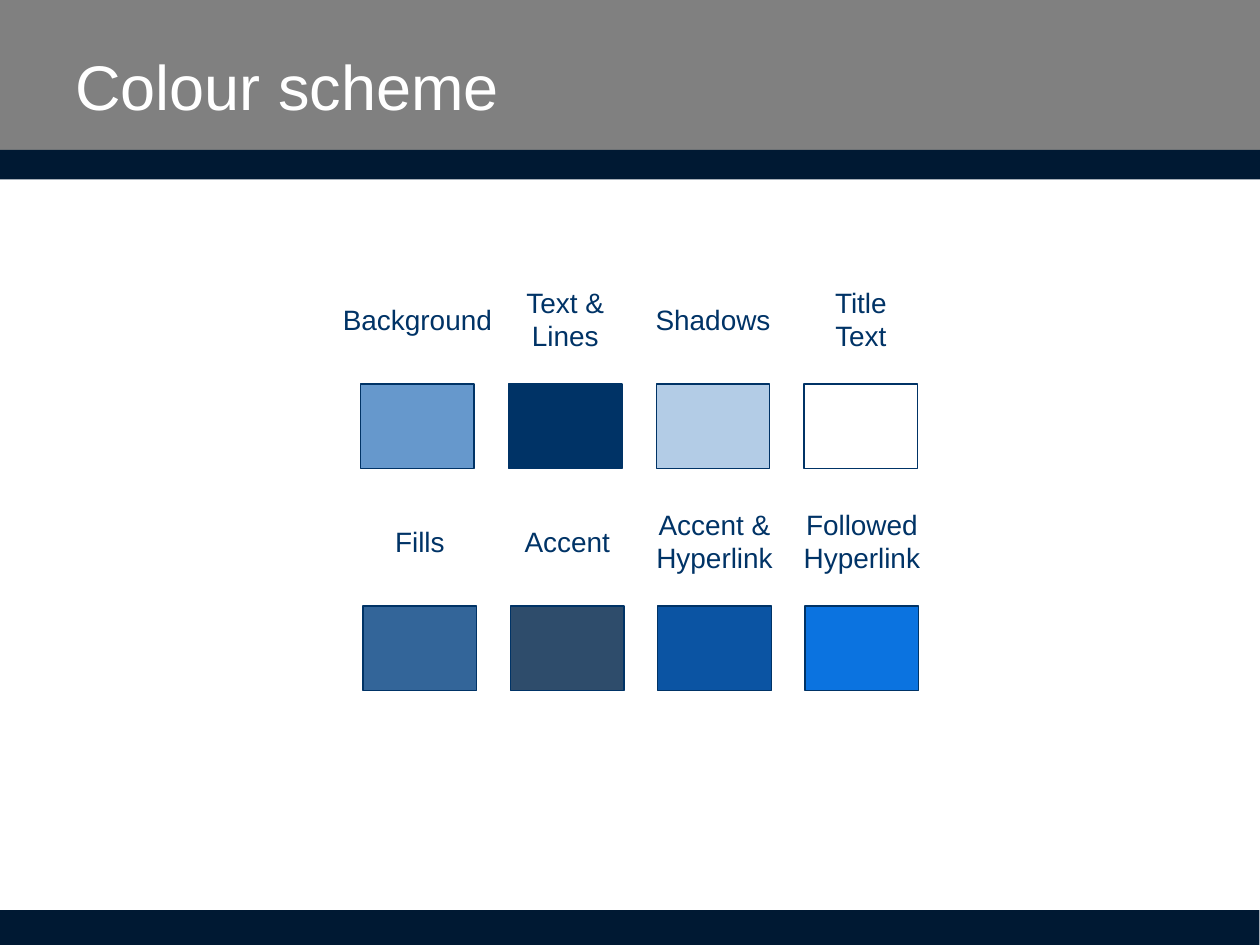
from pptx import Presentation
from pptx.dml.color import RGBColor
from pptx.enum.shapes import MSO_SHAPE
from pptx.enum.text import MSO_ANCHOR, MSO_AUTO_SIZE, PP_ALIGN
from pptx.util import Cm, Pt

COLOURS = {
    "header": "808080",
    "band": "001933",
    "title": "FFFFFF",
    "ink": "003366",
    "background": "6698CC",
    "shadows": "B3CCE6",
    "fills": "336599",
    "accent": "2E4C6B",
    "hyperlink": "0B54A3",
    "followed": "0B73E0",
}


def add_block(left, top, width, height, fill, outline=None):
    block = slide.shapes.add_shape(
        MSO_SHAPE.RECTANGLE, Cm(left), Cm(top), Cm(width), Cm(height))
    block.shadow.inherit = False
    block.fill.solid()
    block.fill.fore_color.rgb = RGBColor.from_string(COLOURS[fill])
    if outline:
        block.line.color.rgb = RGBColor.from_string(COLOURS[outline])
        block.line.width = Pt(0.75)
    else:
        block.line.fill.background()


def add_text(left, top, width, height, lines, size, colour, align, fit):
    box = slide.shapes.add_textbox(Cm(left), Cm(top), Cm(width), Cm(height))
    frame = box.text_frame
    frame.word_wrap = not fit
    frame.auto_size = MSO_AUTO_SIZE.SHAPE_TO_FIT_TEXT if fit else MSO_AUTO_SIZE.NONE
    frame.vertical_anchor = MSO_ANCHOR.TOP if fit else MSO_ANCHOR.MIDDLE
    for index, line in enumerate(lines):
        paragraph = frame.add_paragraph() if index else frame.paragraphs[0]
        paragraph.alignment = align
        run = paragraph.add_run()
        run.text = line
        run.font.name = "Arial"
        run.font.size = Pt(size)
        run.font.color.rgb = RGBColor.from_string(COLOURS[colour])


presentation = Presentation()
presentation.slide_width = Cm(25.4)
presentation.slide_height = Cm(19.05)
slide = presentation.slides.add_slide(presentation.slide_layouts[6])

add_block(0, 0, 25.4, 3.33, "header")
add_block(0, 3.02, 25.4, 0.6, "band")
add_block(0, 18.35, 25.39, 0.75, "band")
add_text(1.27, 0.71, 23.04, 2.01, ["Colour scheme"], 36,
         "title", PP_ALIGN.LEFT, False)

swatch_width, swatch_height = 2.29, 1.7
label_rise = 1.3
label_heights = {1: 0.94, 2: 1.63}

swatch_rows = [
    (7.27, 7.74, 2.98, [
        (["Background"], 3.53, "background"),
        (["Text &", "Lines"], 2.13, "ink"),
        (["Shadows"], 2.82, "shadows"),
        (["Title", "Text"], 1.6, "title"),
    ]),
    (7.32, 12.22, 2.97, [
        (["Fills"], 1.5, "fills"),
        (["Accent"], 2.24, "accent"),
        (["Accent &", "Hyperlink"], 2.88, "hyperlink"),
        (["Followed", "Hyperlink"], 2.88, "followed"),
    ]),
]

for row_left, row_top, pitch, swatches in swatch_rows:
    for column, (label, label_width, fill) in enumerate(swatches):
        left = row_left + column * pitch
        add_block(left, row_top, swatch_width, swatch_height, fill, "ink")
        label_height = label_heights[len(label)]
        add_text(left + (swatch_width - label_width) / 2,
                 row_top - label_rise - label_height / 2,
                 label_width, label_height, label, 16,
                 "ink", PP_ALIGN.CENTER, True)

presentation.save("out.pptx")
